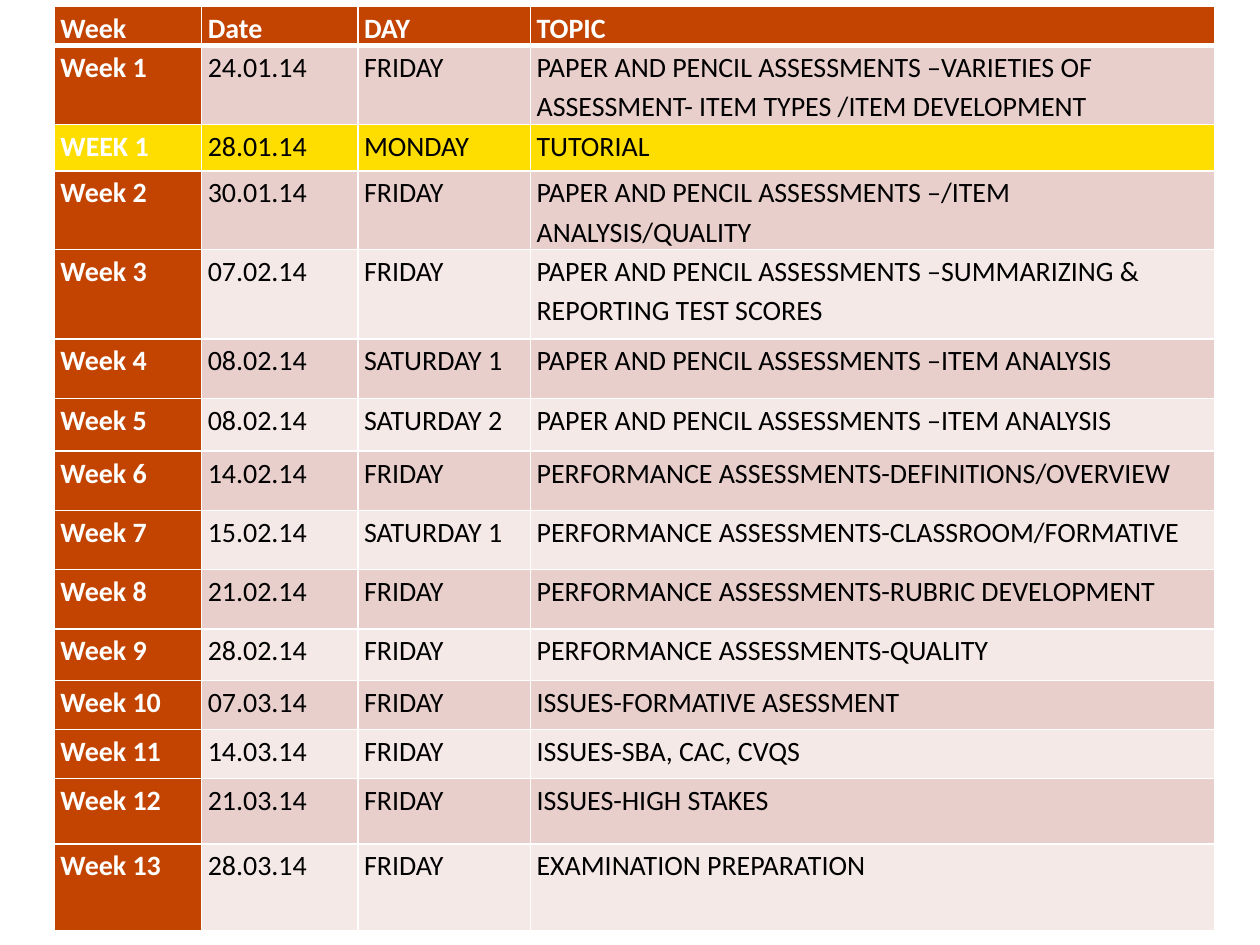
import pptx
import pptx.util
import pptx.dml.color
import lxml.etree
import pptx.oxml.ns

COLORS = {
    "head": "C24400", "odd": "E9CFCC", "even": "F4E9E7",
    "tutorial": "FEDD00", "white": "FFFFFF", "black": "000000",
}
HEADER, TUTORIAL = 0, 2

# Column widths in inches, then each row: height and cell texts
col_widths = [1.17, 1.24, 1.37, 5.43]
PENCIL = "PAPER AND PENCIL ASSESSMENTS –"
PERFORM = "PERFORMANCE ASSESSMENTS-"
schedule = [
    (0.30, "Week", "Date", "DAY", "TOPIC"),
    (0.61, "Week 1", "24.01.14", "FRIDAY",
     PENCIL + "VARIETIES OF ASSESSMENT- ITEM TYPES /ITEM DEVELOPMENT"),
    (0.37, "WEEK 1", "28.01.14", "MONDAY", "TUTORIAL"),
    (0.61, "Week 2", "30.01.14", "FRIDAY", PENCIL + "/ITEM ANALYSIS/QUALITY"),
    (0.71, "Week 3", "07.02.14", "FRIDAY",
     PENCIL + "SUMMARIZING & REPORTING TEST SCORES"),
    (0.47, "Week 4", "08.02.14", "SATURDAY 1", PENCIL + "ITEM ANALYSIS"),
    (0.42, "Week 5", "08.02.14", "SATURDAY 2", PENCIL + "ITEM ANALYSIS"),
    (0.47, "Week 6", "14.02.14", "FRIDAY", PERFORM + "DEFINITIONS/OVERVIEW"),
    (0.47, "Week 7", "15.02.14", "SATURDAY 1", PERFORM + "CLASSROOM/FORMATIVE"),
    (0.47, "Week 8", "21.02.14", "FRIDAY", PERFORM + "RUBRIC DEVELOPMENT"),
    (0.41, "Week 9", "28.02.14", "FRIDAY", PERFORM + "QUALITY"),
    (0.39, "Week 10", "07.03.14", "FRIDAY", "ISSUES-FORMATIVE ASESSMENT"),
    (0.39, "Week 11", "14.03.14", "FRIDAY", "ISSUES-SBA, CAC, CVQS"),
    (0.52, "Week 12", "21.03.14", "FRIDAY", "ISSUES-HIGH STAKES"),
    (0.69, "Week 13", "28.03.14", "FRIDAY", "EXAMINATION PREPARATION"),
]


def add_border(cell, side, width):
    """Draw one white cell edge; call before filling the cell."""
    qn = pptx.oxml.ns.qn
    tcPr = cell._tc.get_or_add_tcPr()
    ln = lxml.etree.SubElement(tcPr, qn("a:ln" + side),
                               w=str(pptx.util.Pt(width)))
    fill = lxml.etree.SubElement(ln, qn("a:solidFill"))
    lxml.etree.SubElement(fill, qn("a:srgbClr"), val=COLORS["white"])


def write_cell(cell, text, size=16, font="Calibri", color="black",
               bold=False, fill="odd"):
    cell.margin_left = cell.margin_right = pptx.util.Inches(0.05)
    cell.margin_top = cell.margin_bottom = 0
    cell.fill.solid()
    cell.fill.fore_color.rgb = pptx.dml.color.RGBColor.from_string(COLORS[fill])
    p = cell.text_frame.paragraphs[0]
    p.line_spacing = 1.15
    r = p.add_run()
    r.text = text
    r.font.size = pptx.util.Pt(size)
    r.font.name = font
    r.font.bold = bold
    r.font.color.rgb = pptx.dml.color.RGBColor.from_string(COLORS[color])


# Slide
prs = pptx.Presentation()
prs.slide_width = pptx.util.Inches(10)
prs.slide_height = pptx.util.Inches(7.5)
s = prs.slides.add_slide(prs.slide_layouts[6])

# Timetable grid
heights = [row[0] for row in schedule]
sp = s.shapes.add_table(
    len(schedule), len(col_widths),
    pptx.util.Inches(0.43), pptx.util.Inches(0.05),
    pptx.util.Inches(sum(col_widths)), pptx.util.Inches(sum(heights)))
table = sp.table
table.first_col = True
for column, width in zip(table.columns, col_widths):
    column.width = pptx.util.Inches(width)

# Cells: dark header row and week column, banded body, yellow tutorial row
for i, (height, *texts) in enumerate(schedule):
    table.rows[i].height = pptx.util.Inches(height)
    band = "odd" if i % 2 else "even"
    for j, text in enumerate(texts):
        heading = i == HEADER or j == 0
        cell = table.cell(i, j)
        for side in "LRTB":
            under_header = (i, side) in [(HEADER, "B"), (HEADER + 1, "T")]
            add_border(cell, side, 3 if under_header else 1)
        fill = "tutorial" if i == TUTORIAL else "head" if heading else band
        write_cell(cell, text, bold=heading, fill=fill,
                   color="white" if heading else "black")

prs.save("out.pptx")
